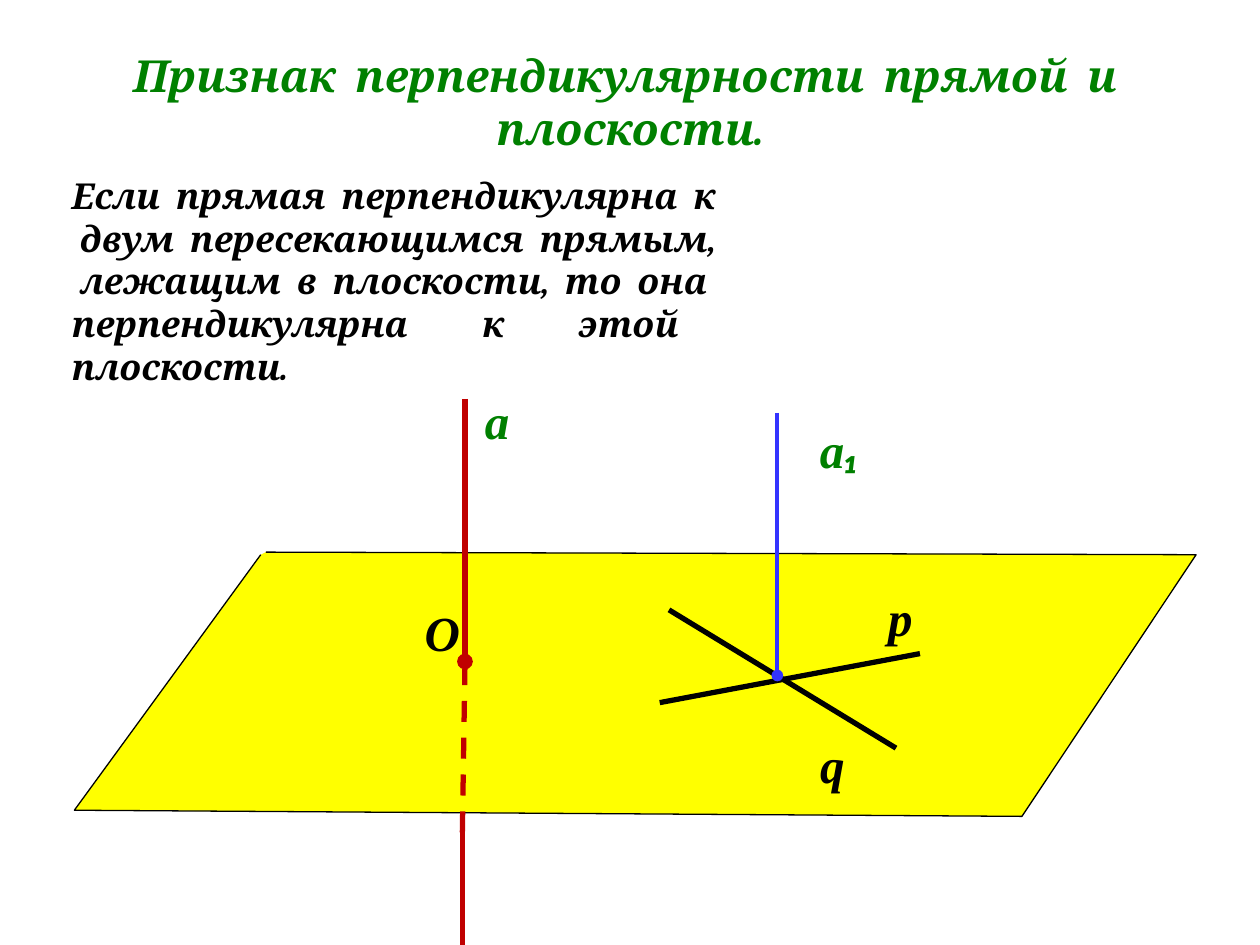
from pptx import Presentation
from pptx.dml.color import RGBColor
from pptx.enum.dml import MSO_LINE
from pptx.enum.shapes import MSO_CONNECTOR
from pptx.enum.text import MSO_ANCHOR, MSO_AUTO_SIZE, PP_ALIGN
from pptx.oxml.ns import qn
from pptx.util import Pt
from lxml.etree import SubElement

GREEN = RGBColor(0x00, 0x80, 0x00)
BLACK = RGBColor(0x00, 0x00, 0x00)
YELLOW = RGBColor(0xFF, 0xFF, 0x00)
RED = RGBColor(0xC0, 0x00, 0x00)
BLUE = RGBColor(0x33, 0x33, 0xFF)

TITLE = "Признак  перпендикулярности  прямой  и  плоскости."
THEOREM = ("Если  прямая  перпендикулярна  к  двум  пересекающимся  прямым,  "
           "лежащим  в  плоскости,  то  она  перпендикулярна  к  этой  плоскости.")


def format_run(run, font_name, size, color):
    font = run.font
    font.name = font_name
    font.size = Pt(size)
    font.bold = font.italic = True
    font.color.rgb = color


def fill_placeholder(shape, box, text, size, spacing, color, alignment, anchor):
    shape.left, shape.top, shape.width, shape.height = (Pt(value) for value in box)
    frame = shape.text_frame
    frame.text = text
    frame.word_wrap = True
    frame.auto_size = MSO_AUTO_SIZE.NONE
    frame.vertical_anchor = anchor
    paragraph = frame.paragraphs[0]
    paragraph.alignment = alignment
    paragraph.line_spacing = Pt(spacing)
    properties = paragraph._p.get_or_add_pPr()
    properties.set("marL", "0")
    properties.set("indent", "0")
    SubElement(properties, qn("a:buNone"))
    format_run(paragraph.runs[0], "Cambria", size, color)


def add_line(slide, box, start, end, color, width=3, dashed=False, dot=False):
    """Draw a line between two points of the box, with an optional end dot."""
    left, top = box[:2]
    connector = slide.shapes.add_connector(
        MSO_CONNECTOR.STRAIGHT, Pt(left + start[0]), Pt(top + start[1]),
        Pt(left + end[0]), Pt(top + end[1]))
    connector.line.color.rgb = color
    connector.line.width = Pt(width)
    if dashed:
        connector.line.dash_style = MSO_LINE.DASH
    if dot:
        SubElement(connector.line._get_or_add_ln(), qn("a:tailEnd"), type="oval")
    SubElement(connector._element.spPr, qn("a:effectLst"))


def add_label(slide, box, position, width, text, color, subscript=""):
    label = slide.shapes.add_textbox(
        Pt(box[0] + position[0]), Pt(box[1] + position[1]), Pt(width), Pt(41))
    frame = label.text_frame
    frame.word_wrap = False
    frame.auto_size = MSO_AUTO_SIZE.SHAPE_TO_FIT_TEXT
    paragraph = frame.paragraphs[0]
    paragraph.text = text
    format_run(paragraph.runs[0], "Times New Roman", 28, color)
    if subscript:
        run = paragraph.add_run()
        run.text = subscript
        format_run(run, "Calibri", 28, color)


def draw_plane(slide, box):
    left, top, width, height = box
    corners = [(109.5, 0), (width, 1.5), (541.5, height), (0, 147.5), (106.5, 1.5)]
    points = [(Pt(left + x), Pt(top + y)) for x, y in corners]
    builder = slide.shapes.build_freeform(*points[0])
    builder.add_line_segments(points[1:], close=False)
    plane = builder.convert_to_shape()
    plane.shadow.inherit = False
    plane.fill.solid()
    plane.fill.fore_color.rgb = YELLOW
    plane.line.color.rgb = BLACK
    plane.line.width = Pt(0.75)


def draw_perpendicular(slide, box):
    """Draw line a: solid above the plane, dashed behind it, solid below."""
    width, height = box[2:]
    upper, lower = width - 8, width - 9.5
    add_line(slide, box, (upper, 8.5), (upper, 158.5), RED, dot=True)
    add_line(slide, box, (lower, 250.5), (lower, height), RED)
    add_line(slide, box, (upper, 160), (lower, 257), RED, dashed=True)
    add_label(slide, box, (upper + 4.3, 0), 29, "а", GREEN)
    add_label(slide, box, (0, 121), 34.5, "O", BLACK)


def draw_crossing_lines(slide, box):
    """Draw p and q in the plane and the line a₁ through their crossing."""
    add_line(slide, box, (5.3, 112.5), (135, 191.5), BLACK)
    add_line(slide, box, (0, 165.5), (148.7, 137.5), BLACK)
    add_line(slide, box, (67.2, 0), (67.2, 150), BLUE, width=2.25, dot=True)
    add_label(slide, box, (123.4, 96), 29, "р", BLACK)
    add_label(slide, box, (84.5, 180), 29, "q", BLACK)
    add_label(slide, box, (84.5, 0), 36, "а", GREEN, subscript="₁")


def main():
    presentation = Presentation()
    presentation.slide_width, presentation.slide_height = Pt(720), Pt(540)
    slide = presentation.slides.add_slide(presentation.slide_layouts[1])
    fill_placeholder(slide.shapes.title, (36, 21.6, 648, 72.7), TITLE, 25.2, 30.3,
                     GREEN, PP_ALIGN.CENTER, MSO_ANCHOR.MIDDLE)
    fill_placeholder(slide.placeholders[1], (33.8, 95.8, 382.3, 124.6), THEOREM, 20.4,
                     24.4, BLACK, PP_ALIGN.JUSTIFY, MSO_ANCHOR.TOP)
    draw_plane(slide, (42.5, 315.5, 641, 151))
    draw_perpendicular(slide, (235.5, 219.5, 38.2, 320.5))
    draw_crossing_lines(slide, (377, 236, 152.4, 226))
    presentation.save("out.pptx")


if __name__ == "__main__":
    main()
